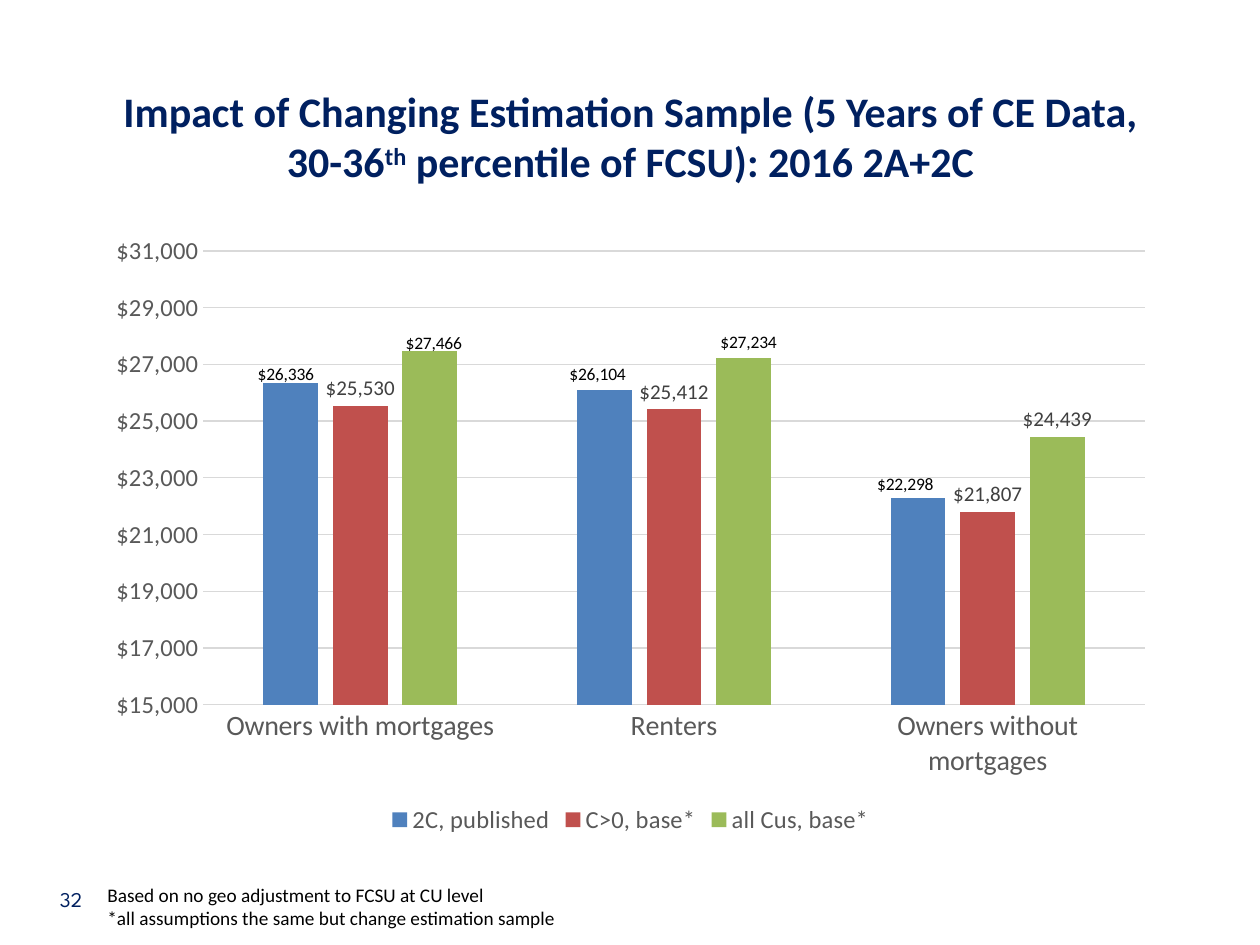
from dataclasses import dataclass

from lxml.etree import SubElement
from pptx import Presentation
from pptx.chart.data import CategoryChartData
from pptx.dml.color import RGBColor
from pptx.enum.chart import XL_CHART_TYPE as ChartType
from pptx.enum.chart import XL_LABEL_POSITION as LabelPos
from pptx.enum.chart import XL_LEGEND_POSITION as LegendPos
from pptx.enum.chart import XL_TICK_MARK as Tick
from pptx.enum.text import MSO_ANCHOR as Anchor
from pptx.enum.text import PP_ALIGN as Align
from pptx.oxml.ns import qn
from pptx.util import Pt

PX = 914400 / 126


@dataclass(frozen=True)
class Theme:
    body: str = "Calibri"
    number: str = "League Spartan"
    navy: str = "002060"
    black: str = "000000"
    axis: str = "595959"
    label: str = "404040"
    grid: str = "D9D9D9"
    title_pt: int = 24
    category_pt: int = 16
    axis_pt: int = 14
    label_pt: int = 12
    number_pt: int = 12
    note_pt: int = 11
    chart_pt: int = 10


T = Theme()
MONEY = '"$"#,##0'
CATEGORIES = ["Owners with mortgages", "Renters", "Owners without mortgages"]
# name, colour, values, label shifts in px by point
SERIES = [
    ("2C, published", "4F81BD", (26336, 26104, 22298),
     {0: (-5, 6), 1: (-7, 0), 2: (-13, 2)}),
    ("C>0, base*", "C0504D", (25530, 25412, 21807), {}),
    ("all Cus, base*", "9BBB59", (27466, 27234, 24439),
     {0: (4, 7), 1: (5, 0)}),
]


def emu(box):
    return [round(v * PX) for v in box]


def set_all(obj, **values):
    for name, value in values.items():
        setattr(obj, name, value)


def style(font, size, color, name=T.body, bold=False):
    set_all(font, size=Pt(size), name=name, bold=bold)
    font.color.rgb = RGBColor.from_string(color)


def set_line(line, color):
    line.color.rgb = RGBColor.from_string(color)
    line.width = Pt(0.75)


def no_margins(tf):
    set_all(tf, margin_left=0, margin_top=0, margin_right=0, margin_bottom=0)


def add_title(slide, box):
    sp = slide.shapes.title
    sp.left, sp.top, sp.width, sp.height = emu(box)
    tf = sp.text_frame
    no_margins(tf)
    set_all(tf, word_wrap=True, vertical_anchor=Anchor.MIDDLE)
    p = tf.paragraphs[0]
    p.alignment = Align.CENTER
    parts = [("Impact of Changing Estimation Sample (5 Years of CE Data, 30-36", 0),
             ("th", 30000), (" percentile of FCSU): 2016 2A+2C", 0)]
    for text, baseline in parts:
        r = p.add_run()
        r.text = text
        style(r.font, T.title_pt, T.navy, bold=True)
        if baseline:
            r.font._element.set("baseline", str(baseline))


def add_text(slide, box, lines, size, color, font=T.body, wrap=True):
    tf = slide.shapes.add_textbox(*emu(box)).text_frame
    tf.word_wrap = wrap
    for i, line in enumerate(lines):
        p = tf.add_paragraph() if i else tf.paragraphs[0]
        r = p.add_run()
        r.text = line
        style(r.font, size, color, font)
    return tf


def shift_labels(series, shifts, box):
    """Move single data labels by px offsets from their usual places."""
    for i in shifts:
        series.points[i].data_label.position = LabelPos.OUTSIDE_END
    for d_lbl in series.data_labels._element.findall(qn("c:dLbl")):
        dx, dy = shifts[int(d_lbl.find(qn("c:idx")).get("val"))]
        layout = SubElement(d_lbl, qn("c:layout"))
        manual = SubElement(layout, qn("c:manualLayout"))
        for axis, share in (("x", dx / box[2]), ("y", dy / box[3])):
            SubElement(manual, qn(f"c:{axis}")).set("val", f"{share:.4f}")
        d_lbl.insert(1, layout)


def format_axes(chart):
    cat, val = chart.category_axis, chart.value_axis
    for axis, size in ((cat, T.category_pt), (val, T.axis_pt)):
        set_all(axis, major_tick_mark=Tick.NONE, minor_tick_mark=Tick.NONE)
        style(axis.tick_labels.font, size, T.axis)
    set_line(cat.format.line, T.grid)
    set_all(val, minimum_scale=15000, maximum_scale=32000, major_unit=2000,
            has_major_gridlines=True)
    set_line(val.major_gridlines.format.line, T.grid)
    val.format.line.fill.background()
    set_all(val.tick_labels, number_format=MONEY, number_format_is_linked=False)


def add_cost_chart(slide, box):
    data = CategoryChartData(number_format=MONEY)
    data.categories = CATEGORIES
    for name, _, values, _ in SERIES:
        data.add_series(name, values)
    chart = slide.shapes.add_chart(
        ChartType.COLUMN_CLUSTERED, *emu(box), data).chart
    style(chart.font, T.chart_pt, T.black)
    set_all(chart, has_title=False, has_legend=True)
    set_all(chart.legend, position=LegendPos.BOTTOM, include_in_layout=False)
    style(chart.legend.font, T.axis_pt, T.axis)
    format_axes(chart)

    plot = chart.plots[0]
    set_all(plot, gap_width=219, overlap=-27, vary_by_categories=False)
    for series, (_, color, _, shifts) in zip(plot.series, SERIES):
        series.format.fill.solid()
        series.format.fill.fore_color.rgb = RGBColor.from_string(color)
        labels = series.data_labels
        set_all(labels, show_value=True, number_format=MONEY,
                number_format_is_linked=False, position=LabelPos.OUTSIDE_END)
        style(labels.font, T.label_pt, T.label)
        shift_labels(series, shifts, box)


def main():
    prs = Presentation()
    prs.slide_width, prs.slide_height = emu((1260, 945))
    slide = prs.slides.add_slide(prs.slide_layouts[5])
    add_title(slide, (95, 85, 1071, 102))
    no_margins(add_text(slide, (60, 886, 542, 30), ["32"],
                        T.number_pt, T.navy, T.number))
    add_cost_chart(slide, (95, 210, 1071, 630))
    add_text(slide, (95, 877, 475, 83),
             ["Based on no geo adjustment to FCSU at CU level",
              "*all assumptions the same but change estimation sample"],
             T.note_pt, T.black, wrap=False)
    prs.save("out.pptx")


if __name__ == "__main__":
    main()
